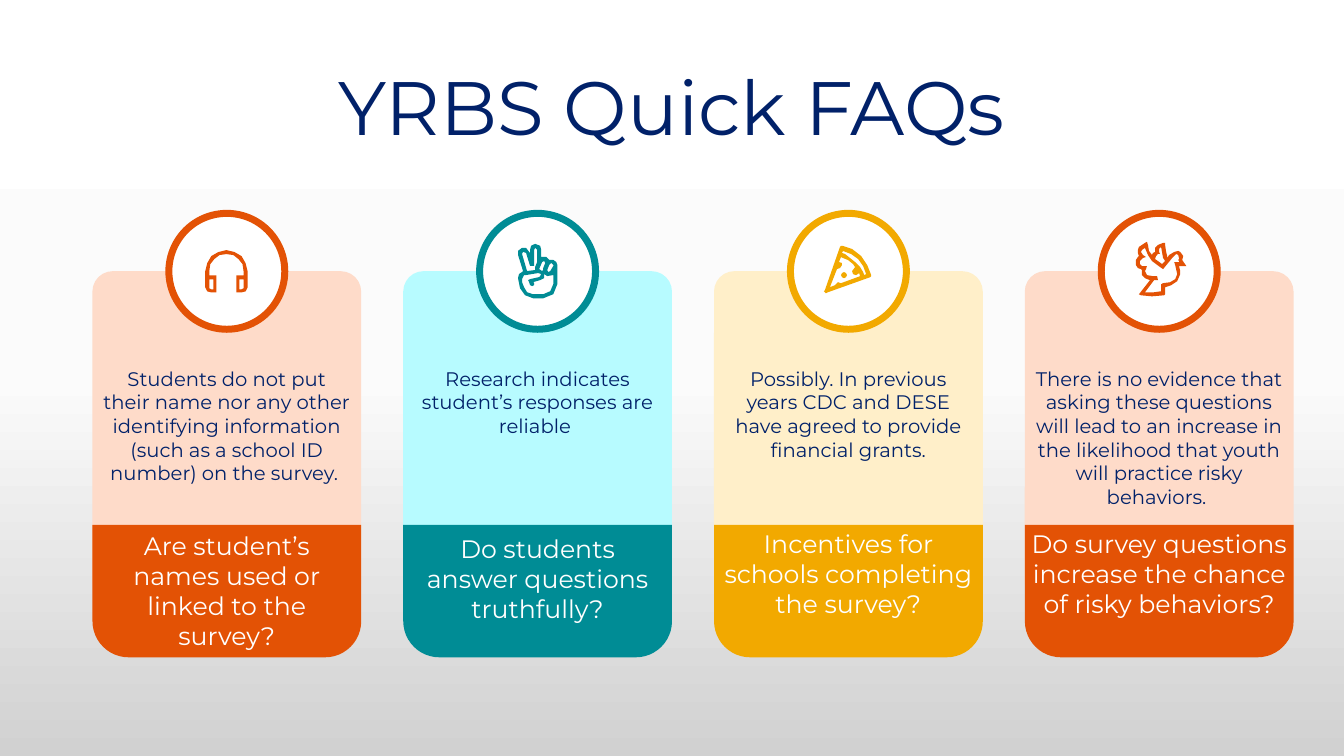
from copy import deepcopy

from pptx import Presentation
from pptx.dml.color import RGBColor
from pptx.enum.shapes import MSO_SHAPE
from pptx.enum.text import PP_ALIGN
from pptx.oxml.ns import qn
from pptx.util import Pt

ROUND_RECT = MSO_SHAPE.ROUNDED_RECTANGLE
ROUND_TOP = MSO_SHAPE.ROUND_2_SAME_RECTANGLE
OVAL = MSO_SHAPE.OVAL
CENTER = PP_ALIGN.CENTER

FONT = "Montserrat"
NAVY = RGBColor(0x01, 0x21, 0x69)
WHITE = RGBColor(0xFF, 0xFF, 0xFF)
ORANGE = RGBColor(0xE3, 0x52, 0x05)
PEACH = RGBColor(0xFE, 0xDB, 0xC9)
TEAL = RGBColor(0x00, 0x8C, 0x95)
AQUA = RGBColor(0xB7, 0xFB, 0xFF)
GOLD = RGBColor(0xF2, 0xA9, 0x00)
CREAM = RGBColor(0xFF, 0xEF, 0xC9)
BACKGROUND = [(0, WHITE), (0.5, RGBColor(0xFB, 0xFB, 0xFB)),
              (1, RGBColor(0xD1, 0xD1, 0xD1))]

CARD_LEFT, CARD_PITCH, CARD_W = 66, 222, 192
CIRCLE = 82.8
ICON_UNIT = Pt(0.72)

# Icon outlines: the first contour is the silhouette, the others are holes
HEADPHONES = [
    [(21, 0), (13, 1.6), (6, 6), (1.6, 13), (0, 21), (0, 37), (2, 41), (6, 42),
     (11, 42), (11, 25), (4, 25), (4, 21), (5.3, 14.5), (9, 9), (14.5, 5.3),
     (21, 4), (27.5, 5.3), (33, 9), (36.7, 14.5), (38, 21), (38, 25), (31, 25),
     (31, 42), (36, 42), (40, 41), (42, 37), (42, 21), (40.4, 13), (36, 6),
     (29, 1.6)],
    [(4, 29), (8, 29), (8, 39), (6, 39), (4.5, 38.5), (4, 37)],
    [(34, 29), (38, 29), (38, 37), (37.5, 38.5), (36, 39), (34, 39)],
]
PEACE_HAND = [
    [(17, 0), (13, 2), (12, 6), (12, 9), (11, 8), (8.5, 4.5), (4, 4), (0.5, 7),
     (0, 11), (5, 27), (4, 28), (1, 30.5), (0, 34), (1, 39), (2, 44), (7, 51),
     (15, 54), (25, 54), (35, 50), (39, 40), (39, 21), (38, 18), (35, 16),
     (31, 16), (28, 13), (23, 13), (23, 6), (21.5, 2)],
    [(17, 4), (19, 6), (19, 18), (17, 23), (17, 26), (9, 27), (4, 10), (5, 8),
     (8, 9), (12, 22), (16, 22), (16, 6)],
    [(26, 17), (27, 19), (25, 24), (25, 26), (24, 27), (21, 25), (24, 18)],
    [(33, 19), (35, 21), (35, 22), (32, 27), (30, 28), (29, 26), (31, 21)],
    [(20, 29), (23, 30), (22, 32), (21, 33), (12, 35), (10, 36), (11, 38),
     (12, 41), (14, 42), (16, 41), (16, 39), (15, 38), (22, 36), (26, 34),
     (26, 30), (29, 32), (35, 31), (35, 40), (32, 47), (25, 50), (15, 50),
     (9, 48), (6, 43), (4, 38), (4, 35), (6, 31), (8, 31)],
]
PIZZA = [
    [(17, 0), (16, 1), (1, 44), (0, 45), (2, 47), (4, 46), (46, 31), (47, 30),
     (47, 29), (43, 19), (37, 10), (28, 3), (19, 0)],
    [(19, 5), (27, 8), (34, 13), (39, 20), (42, 28), (40, 29), (39, 26),
     (36, 21), (31, 16), (26, 11.5), (21, 8), (18, 7)],
    [(17, 11), (19, 12), (24, 14.5), (29, 18), (31, 21), (28, 25), (29, 28),
     (32, 29), (35, 27), (36, 30), (17, 37), (14, 36), (11, 39), (6, 41),
     (13, 23), (16, 22.5), (18, 19), (17.5, 17), (15, 16)],
    [(20, 26), (18, 27), (17, 29), (18, 31), (20, 32), (22, 31), (23, 29),
     (22, 27)],
]
DOVE = [
    [(11, 0), (9, 1), (3, 5), (1.5, 8), (2, 11), (3, 14), (2, 15), (0, 18),
     (0, 23), (2, 26), (5, 27), (6, 28), (6.5, 33), (9, 36), (14, 38), (3, 52),
     (5, 53), (16, 54), (28, 53), (29, 52), (29, 45), (35, 43), (41, 39),
     (44, 32), (44.5, 29), (43, 25), (43, 24), (50, 24), (48, 21), (46, 18),
     (47, 14), (44, 10), (42, 9), (38, 10), (33, 13), (31, 16), (31, 14),
     (29.5, 10), (29, 3), (29, 1), (27, 1), (22, 3), (19, 6), (19, 10),
     (17, 11), (16, 13), (13, 9), (12, 3)],
    [(25, 5), (27, 16), (29, 19), (26, 22), (19, 17), (20, 14), (22, 12),
     (24, 12), (23, 10), (23, 7), (24, 6)],
    [(9, 6), (11.5, 13), (16, 19), (24, 25), (27, 27), (36, 16), (40, 12.5),
     (42, 13), (43, 17), (42, 18), (43, 19), (43, 20), (38, 20), (39, 23),
     (41, 32), (39, 37), (34, 40), (27, 41), (25, 42), (25, 49), (18, 50.5),
     (9, 50), (18, 38), (22, 38), (21, 34), (17, 34), (11, 33), (9, 29),
     (10, 27), (11, 24), (8, 24), (6, 24), (4, 22), (4, 19), (5, 18), (7, 16),
     (10, 15), (7, 13), (5, 10), (6, 8)],
]

# dark, light, icon, icon offset, icon top, answer, answer height,
# question, question top, question height, question overhang on each side
CARDS = [
    (ORANGE, PEACH, HEADPHONES, 80.6, 178.6,
     "Students do not put their name nor any other identifying information "
     "(such as a school ID number) on the survey. ", 92,
     "Are student’s names used or linked to the survey?", 375, 94.5, 0),
    (TEAL, AQUA, PEACE_HAND, 82, 174.2,
     "Research indicates student’s responses are reliable ", 58,
     "Do students answer questions truthfully?", 377.3, 72.7, 0),
    (GOLD, CREAM, PIZZA, 78.5, 175.7,
     "Possibly. In previous years CDC and DESE have agreed to provide "
     "financial grants.", 75,
     "Incentives for schools completing the survey?", 373.7, 94.5, 0),
    (ORANGE, PEACH, DOVE, 79.4, 172.8,
     "There is no evidence that asking these questions will lead to an "
     "increase in the likelihood that youth will practice risky behaviors. ",
     109,
     "Do survey questions increase the chance of risky behaviors?",
     373.7, 94.5, 7.5),
]

prs = Presentation()
prs.slide_width, prs.slide_height = Pt(960), Pt(540)
s = prs.slides.add_slide(prs.slide_layouts[6])


def add_filled(kind, x, y, w, h, color):
    sp = s.shapes.add_shape(kind, Pt(x), Pt(y), Pt(w), Pt(h))
    sp.shadow.inherit = False
    sp.fill.solid()
    sp.fill.fore_color.rgb = color
    sp.line.fill.background()
    return sp


def add_text(text, x, y, w, h, size, color, wrap=True):
    tf = s.shapes.add_textbox(Pt(x), Pt(y), Pt(w), Pt(h)).text_frame
    tf.word_wrap = wrap
    p = tf.paragraphs[0]
    p.alignment = CENTER
    r = p.add_run()
    r.text = text
    r.font.name = FONT
    r.font.size = Pt(size)
    r.font.color.rgb = color


# Background: a three-stop gradient from top to bottom
fill = s.background.fill
fill.gradient()
fill.gradient_angle = 270
stop_list = next(s.element.iter(qn("a:gsLst")))
stop_list.insert(1, deepcopy(stop_list[0]))
for stop, (position, color) in zip(fill.gradient_stops, BACKGROUND):
    stop.position = position
    stop.color.rgb = color

for i, (dark, light, icon, icon_dx, icon_top, answer, answer_h,
        question, question_top, question_h, overhang) in enumerate(CARDS):
    left = CARD_LEFT + i * CARD_PITCH
    card = add_filled(ROUND_RECT, left, 193.7, CARD_W, 237, light)
    card.adjustments[0] = 0.076
    footer = add_filled(ROUND_TOP, left, 375, CARD_W, 94.5, dark)
    footer.rotation = 180
    footer.adjustments[0] = 0.273
    circle = add_filled(OVAL, left + (CARD_W - CIRCLE) / 2, 152.4,
                        CIRCLE, CIRCLE, WHITE)
    circle.line.color.rgb = dark
    circle.line.width = Pt(5)

    outline, *holes = icon
    fb = s.shapes.build_freeform(*outline[0], scale=ICON_UNIT)
    fb.add_line_segments(outline[1:])
    for hole in holes:
        fb.move_to(*hole[0])
        fb.add_line_segments(hole[1:])
    sp = fb.convert_to_shape(Pt(left + icon_dx), Pt(icon_top))
    sp.shadow.inherit = False
    sp.fill.solid()
    sp.fill.fore_color.rgb = dark
    sp.line.fill.background()

    add_text(answer, left, 258.5, CARD_W, answer_h, 14, NAVY)
    add_text(question, left - overhang, question_top,
             CARD_W + 2 * overhang, question_h, 18, WHITE)

add_text("YRBS Quick FAQs", 216.7, 38.9, 526.3, 72.7, 54, NAVY, wrap=False)

prs.save("out.pptx")
